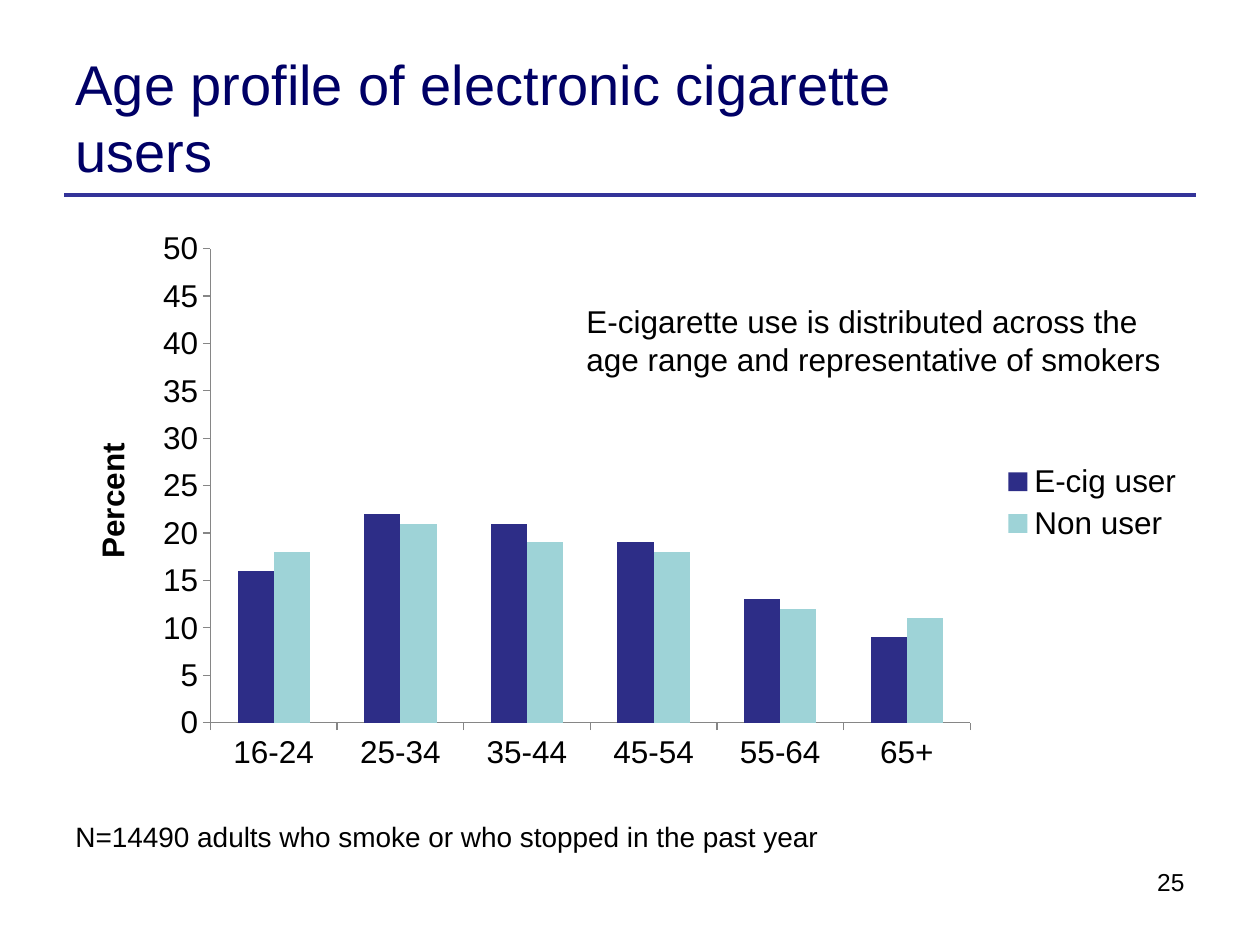
from dataclasses import dataclass

import pptx
import pptx.chart.data
import pptx.dml.color
import pptx.enum.chart
import pptx.enum.shapes
import pptx.enum.text
import pptx.oxml
import pptx.oxml.ns
import pptx.util
from pptx.util import Pt


@dataclass(frozen=True)
class Theme:
    font: str = "Arial"
    title_color: str = "000066"
    text_color: str = "000000"
    rule_color: str = "333399"
    axis_color: str = "868686"
    series_colors: tuple = ("2D2D87", "9ED3D7")
    title_size: int = 32
    body_size: int = 18
    note_size: int = 16
    number_size: int = 14


THEME = Theme()
ALIGN = pptx.enum.text.PP_ALIGN
AGES = ("16-24", "25-34", "35-44", "45-54", "55-64", "65+")
SERIES = {
    "E-cig user": (16, 22, 21, 19, 13, 9),
    "Non user": (18, 21, 19, 18, 12, 11),
}


def rgb(color):
    return pptx.dml.color.RGBColor.from_string(color)


def format_font(font, size, color=THEME.text_color, bold=False):
    font.name = THEME.font
    font.size = Pt(size)
    font.bold = bold
    font.color.rgb = rgb(color)


def write_text(frame, text, *, size, color=THEME.text_color, bold=False,
               align=ALIGN.LEFT, wrap=True):
    frame.word_wrap = wrap
    frame.auto_size = pptx.enum.text.MSO_AUTO_SIZE.NONE
    paragraph = frame.paragraphs[0]
    paragraph.alignment = align
    run = paragraph.add_run()
    run.text = text
    format_font(run.font, size, color, bold)


def add_text(slide, text, left, top, width, height, **text_format):
    box = slide.shapes.add_textbox(Pt(left), Pt(top), Pt(width), Pt(height))
    write_text(box.text_frame, text, **text_format)


def fill_title(slide, text, left, top, width, height):
    title = slide.shapes.title
    title.left, title.top = Pt(left), Pt(top)
    title.width, title.height = Pt(width), Pt(height)
    title.text_frame.vertical_anchor = pptx.enum.text.MSO_ANCHOR.MIDDLE
    write_text(title.text_frame, text, size=THEME.title_size, color=THEME.title_color)


def add_rule(slide, left, right, top):
    rule = slide.shapes.add_connector(
        pptx.enum.shapes.MSO_CONNECTOR.STRAIGHT, Pt(left), Pt(top), Pt(right), Pt(top))
    rule.line.color.rgb = rgb(THEME.rule_color)
    rule.line.width = Pt(2.25)
    rule._element.spPr.append(pptx.oxml.parse_xml(
        f"<a:effectLst {pptx.oxml.ns.nsdecls('a')}/>"))


def place_plot(chart, x, y, w, h):
    """Fix the inner plot area as fractions of the chart's frame."""
    numbers = "".join(f'<c:{name} val="{value}"/>' for name, value in
                      (("x", x), ("y", y), ("w", w), ("h", h)))
    layout = pptx.oxml.parse_xml(
        f"<c:layout {pptx.oxml.ns.nsdecls('c')}><c:manualLayout>"
        '<c:layoutTarget val="inner"/><c:xMode val="edge"/><c:yMode val="edge"/>'
        f"{numbers}</c:manualLayout></c:layout>")
    plot_area = chart._chartSpace.chart.plotArea
    for old in plot_area.findall(pptx.oxml.ns.qn("c:layout")):
        plot_area.remove(old)
    plot_area.insert(0, layout)


def format_axis(axis):
    axis.has_major_gridlines = False
    axis.major_tick_mark = pptx.enum.chart.XL_TICK_MARK.OUTSIDE
    axis.minor_tick_mark = pptx.enum.chart.XL_TICK_MARK.NONE
    axis.format.line.color.rgb = rgb(THEME.axis_color)
    axis.format.line.width = Pt(0.75)
    format_font(axis.tick_labels.font, THEME.body_size)


def add_age_chart(slide, left, top, width, height):
    data = pptx.chart.data.CategoryChartData()
    data.categories = AGES
    for name, values in SERIES.items():
        data.add_series(name, values)
    chart = slide.shapes.add_chart(
        pptx.enum.chart.XL_CHART_TYPE.COLUMN_CLUSTERED,
        Pt(left), Pt(top), Pt(width), Pt(height), data).chart
    format_font(chart.font, THEME.body_size)
    chart.has_title = False

    plot = chart.plots[0]
    plot.gap_width = 150
    plot.overlap = 0
    plot.vary_by_categories = False
    for series, color in zip(plot.series, THEME.series_colors):
        series.format.fill.solid()
        series.format.fill.fore_color.rgb = rgb(color)

    format_axis(chart.category_axis)
    value_axis = chart.value_axis
    format_axis(value_axis)
    value_axis.minimum_scale, value_axis.maximum_scale = 0, 50
    value_axis.major_unit = 5
    value_axis.has_title = True
    title = value_axis.axis_title.text_frame.paragraphs[0].add_run()
    title.text = "Percent"
    format_font(title.font, THEME.body_size, bold=True)

    chart.has_legend = True
    chart.legend.position = pptx.enum.chart.XL_LEGEND_POSITION.RIGHT
    chart.legend.include_in_layout = False
    format_font(chart.legend.font, THEME.body_size)
    place_plot(chart, x=0.13, y=0.05, w=0.67, h=0.84)


def main():
    presentation = pptx.Presentation()
    presentation.slide_width, presentation.slide_height = Pt(720), Pt(540)
    slide = presentation.slides.add_slide(presentation.slide_layouts[5])
    margin = 36

    add_rule(slide, 36.75, 683.25, 111.4)
    fill_title(slide, "Age profile of electronic cigarette users", margin, 21.6, 568, 90)
    add_text(slide, "25", 484.5, 492, 199.5, 37.5,
             size=THEME.number_size, align=ALIGN.RIGHT)
    add_age_chart(slide, margin, 126, 648, 322.5)
    add_text(slide, "N=14490 adults who smoke or who stopped in the past year",
             margin, 465, 444, 26.6, size=THEME.note_size, wrap=False)
    add_text(slide, "E-cigarette use is distributed across the age range "
             "and representative of smokers",
             328, 169.2, 343.5, 51, size=THEME.body_size)

    presentation.save("out.pptx")


if __name__ == "__main__":
    main()
